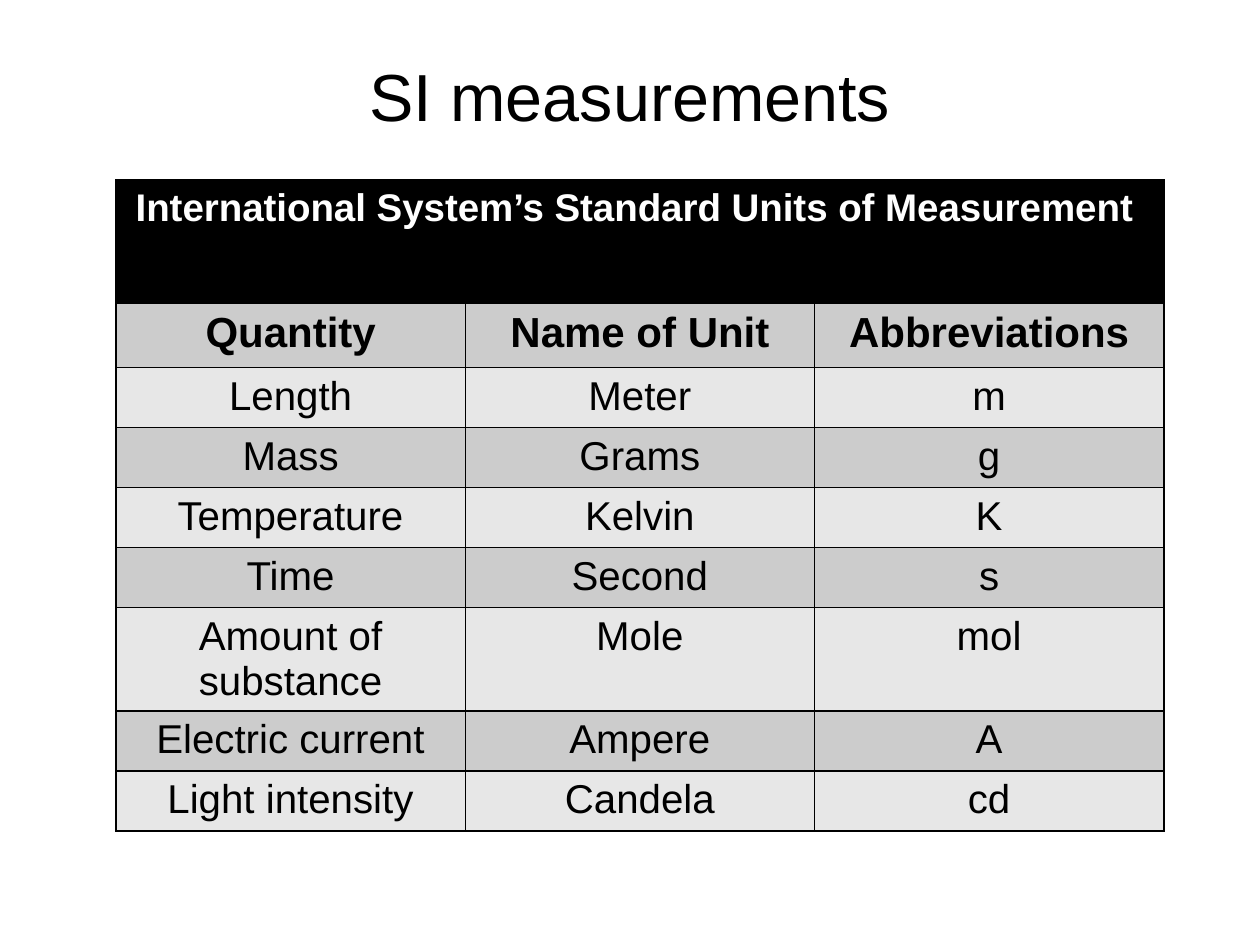
from lxml.etree import SubElement
from pptx import Presentation
from pptx.dml.color import RGBColor
from pptx.enum.text import MSO_ANCHOR, PP_ALIGN
from pptx.oxml.ns import qn
from pptx.util import Cm, Pt

FONT = "Arial"
BLACK, WHITE = "000000", "FFFFFF"
DARK_BAND, LIGHT_BAND = "CCCCCC", "E7E7E7"

TABLE_TITLE = "International System’s Standard Units of Measurement "
UNITS = [
    ("Quantity", "Name of Unit", "Abbreviations"),
    ("Length", "Meter", "m"),
    ("Mass", "Grams", "g"),
    ("Temperature", "Kelvin", "K"),
    ("Time", "Second", "s"),
    ("Amount of substance", "Mole", "mol"),
    ("Electric current", "Ampere", "A"),
    ("Light intensity", "Candela", "cd"),
]
COL_WIDTH = 7.04
ROW_HEIGHTS = [2.48, 1.3] + [1.21] * 4 + [2.08] + [1.21] * 2


def rgb(color):
    return RGBColor.from_string(color)


def write(tf, text, size, color=BLACK, bold=False):
    tf.text = text
    p = tf.paragraphs[0]
    p.alignment = PP_ALIGN.CENTER
    p.font.name = FONT
    p.font.size = Pt(size)
    p.font.bold = bold
    p.font.color.rgb = rgb(color)


def add_title(slide, text):
    title = slide.shapes.title
    title.left, title.top = Cm(0.76), Cm(0.76)
    title.width, title.height = Cm(23.88), Cm(2.29)
    tf = title.text_frame
    tf.vertical_anchor = MSO_ANCHOR.MIDDLE
    write(tf, text, 38)


def set_borders(cell, color, width):
    """Draw all four sides; borders must precede the fill in tcPr."""
    tc_pr = cell._tc.get_or_add_tcPr()
    for side in ("lnL", "lnR", "lnT", "lnB"):
        ln = SubElement(tc_pr, qn(f"a:{side}"), w=str(Pt(width)))
        fill = SubElement(ln, qn("a:solidFill"))
        SubElement(fill, qn("a:srgbClr"), val=color)


def format_cell(cell, fill):
    set_borders(cell, BLACK, 1)
    cell.fill.solid()
    cell.fill.fore_color.rgb = rgb(fill)


def add_units_table(slide):
    n_rows, n_cols = len(ROW_HEIGHTS), len(UNITS[0])
    frame = slide.shapes.add_table(
        n_rows, n_cols, Cm(2.34), Cm(3.63),
        Cm(n_cols * COL_WIDTH), Cm(sum(ROW_HEIGHTS)))
    table = frame.table
    for col in table.columns:
        col.width = Cm(COL_WIDTH)
    for row, height in zip(table.rows, ROW_HEIGHTS):
        row.height = Cm(height)

    for cell in table.rows[0].cells:
        format_cell(cell, BLACK)
    heading = table.cell(0, 0)
    heading.merge(table.cell(0, n_cols - 1))
    write(heading.text_frame, TABLE_TITLE, 22, WHITE, bold=True)

    for i, unit in enumerate(UNITS, start=1):
        is_header = i == 1
        for j, text in enumerate(unit):
            cell = table.cell(i, j)
            format_cell(cell, DARK_BAND if i % 2 else LIGHT_BAND)
            write(cell.text_frame, text, 24 if is_header else 23,
                  bold=is_header)


def main():
    prs = Presentation()
    prs.slide_width, prs.slide_height = Cm(25.4), Cm(19.05)
    slide = prs.slides.add_slide(prs.slide_layouts[5])
    add_title(slide, "SI measurements")
    add_units_table(slide)
    prs.save("out.pptx")


if __name__ == "__main__":
    main()
